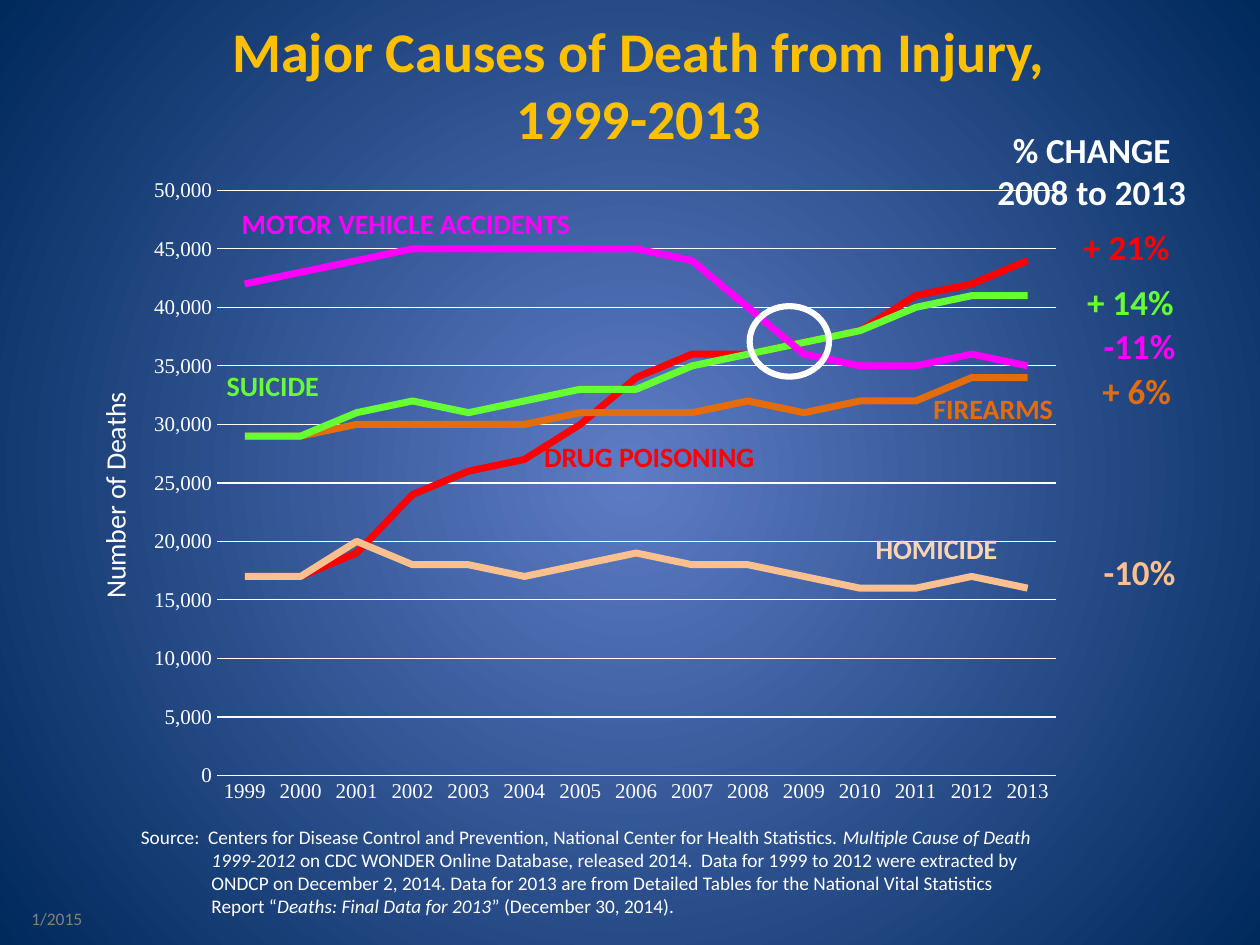
from lxml import etree
from pptx import Presentation
from pptx.chart.data import CategoryChartData
from pptx.dml.color import RGBColor
from pptx.enum.chart import XL_CHART_TYPE, XL_TICK_MARK
from pptx.enum.shapes import MSO_SHAPE
from pptx.enum.text import MSO_AUTO_SIZE, PP_ALIGN
from pptx.oxml import parse_xml
from pptx.oxml.ns import nsdecls, qn
from pptx.util import Inches, Pt

LINE_CHART = XL_CHART_TYPE.LINE
NO_TICKS = XL_TICK_MARK.NONE
OVAL = MSO_SHAPE.OVAL
GROW = MSO_AUTO_SIZE.SHAPE_TO_FIT_TEXT
LEFT, CENTER = PP_ALIGN.LEFT, PP_ALIGN.CENTER

COLORS = {
    "center": "5E7CC5", "edge": "00295C", "white": "FFFFFF", "gold": "FFC000",
    "gray": "808080", "drugs": "FF0000", "firearms": "E46C0A",
    "suicide": "66FF33", "homicide": "FAC090", "homicide label": "FCD5B5",
    "vehicles": "FF00FF",
}
THOUSANDS = {
    "drugs": [17, 17, 19, 24, 26, 27, 30, 34, 36, 36, 37, 38, 41, 42, 44],
    "firearms": [29, 29, 30, 30, 30, 30, 31, 31, 31, 32, 31, 32, 32, 34, 34],
    "suicide": [29, 29, 31, 32, 31, 32, 33, 33, 35, 36, 37, 38, 40, 41, 41],
    "homicide": [17, 17, 20, 18, 18, 17, 18, 19, 18, 18, 17, 16, 16, 17, 16],
    "vehicles": [42, 43, 44, 45, 45, 45, 45, 45, 44, 40, 36, 35, 35, 36, 35],
}

presentation = Presentation()
presentation.slide_width = Inches(10)
presentation.slide_height = Inches(7.5)
COLUMN = presentation.slide_width / 100
ROW = presentation.slide_height / 75
slide = presentation.slides.add_slide(presentation.slide_layouts[6])


def place(left, top, width, height):
    return [int(left * COLUMN), int(top * ROW), int(width * COLUMN), int(height * ROW)]


def add_text(text, box, size, color, bold=False, align=LEFT, wrap=True, hanging=0):
    frame = slide.shapes.add_textbox(*place(*box)).text_frame
    frame.word_wrap = wrap
    frame.auto_size = GROW
    for number, line in enumerate(text.split("\n")):
        paragraph = frame.add_paragraph() if number else frame.paragraphs[0]
        paragraph.alignment = align
        if hanging:
            properties = paragraph._p.get_or_add_pPr()
            properties.set("marL", str(int(hanging * COLUMN)))
            properties.set("indent", str(-int(hanging * COLUMN)))
        for part, words in enumerate(line.split("|")):
            run = paragraph.add_run()
            run.text = words
            run.font.name = "Calibri"
            run.font.size = Pt(size)
            run.font.bold = bold
            run.font.italic = part % 2 == 1
            run.font.color.rgb = RGBColor.from_string(COLORS[color])


background = slide.background.fill
background.gradient()
for stop, color in zip(background.gradient_stops, ("center", "edge")):
    stop.color.rgb = RGBColor.from_string(COLORS[color])
gradient = slide.element.find(".//" + qn("a:gradFill"))
gradient.remove(gradient.find(qn("a:lin")))
radial = etree.SubElement(gradient, qn("a:path"), path="circle")
etree.SubElement(radial, qn("a:fillToRect"), l="50000", t="50000", r="50000", b="50000")

chart_data = CategoryChartData(number_format="#,##0")
chart_data.categories = [str(year) for year in range(1999, 2014)]
for cause, values in THOUSANDS.items():
    chart_data.add_series(cause.capitalize(), [value * 1000 for value in values])
chart = slide.shapes.add_chart(LINE_CHART, *place(4.8, 13.2, 80.6, 51.6), chart_data).chart
white = RGBColor.from_string(COLORS["white"])
chart.has_legend = False
chart.has_title = False
chart.font.name = "Times New Roman"
chart.font.size = Pt(10)
chart.font.color.rgb = white
chart.plots[0].vary_by_categories = False
for series, cause in zip(chart.plots[0].series, THOUSANDS):
    series.smooth = False
    series.format.line.width = Pt(4)
    series.format.line.color.rgb = RGBColor.from_string(COLORS[cause])

years, deaths = chart.category_axis, chart.value_axis
for axis in (years, deaths):
    axis.major_tick_mark = axis.minor_tick_mark = NO_TICKS
    axis.tick_labels.font.name = "Times New Roman"
    axis.tick_labels.font.size = Pt(12)
    axis.tick_labels.font.color.rgb = white
deaths.minimum_scale, deaths.maximum_scale, deaths.major_unit = 0, 50000, 5000
deaths.tick_labels.number_format = "#,##0"
deaths.tick_labels.number_format_is_linked = False
deaths.format.line.fill.background()
for line in (years.format.line, deaths.major_gridlines.format.line):
    line.color.rgb = white
    line.width = Pt(0.75)

title_frame = deaths.axis_title.text_frame
title_frame.text = "Number of Deaths"
title_font = title_frame.paragraphs[0].runs[0].font
title_font.name, title_font.size, title_font.bold = "Calibri", Pt(16), False
title_font.color.rgb = white
title_body = title_frame._txBody.find(qn("a:bodyPr"))
title_body.set("rot", "-5400000")
title_body.set("vert", "horz")

LAYOUTS = [
    (chart._chartSpace.find(".//" + qn("c:plotArea")), 0,
     {"layoutTarget": "inner", "xMode": "edge", "yMode": "edge",
      "x": 0.154, "y": 0.037, "w": 0.826, "h": 0.9}),
    (deaths.axis_title._element, 1,
     {"xMode": "edge", "yMode": "edge", "x": 0.03, "y": 0.34}),
]
for element, position, settings in LAYOUTS:
    for existing in element.findall(qn("c:layout")):
        element.remove(existing)
    layout = parse_xml(f"<c:layout {nsdecls('c')}><c:manualLayout/></c:layout>")
    for name, value in settings.items():
        etree.SubElement(layout[0], qn(f"c:{name}"), val=str(value))
    element.insert(position, layout)

add_text("Major Causes of Death from Injury, 1999-2013", (13.2, 0.8, 75, 11.8),
         32, "gold", bold=True, align=CENTER)
add_text("Source:  Centers for Disease Control and Prevention, National Center for "
         "Health Statistics. |Multiple Cause of Death 1999-2012| on CDC WONDER Online "
         "Database, released 2014.  Data for 1999 to 2012 were extracted by ONDCP on "
         "December 2, 2014. Data for 2013 are from Detailed Tables for the National "
         "Vital Statistics Report “|Deaths: Final Data for 2013|” (December 30, 2014).",
         (10.2, 65, 73.3, 8.4), 11, "white", hanging=5.6)
add_text("1/2015", (1.5, 71.6, 6.8, 2.7), 10, "gray", hanging=6.3)
add_text("% CHANGE\n2008 to 2013", (75, 9.7, 23.3, 7.7), 20, "white", bold=True, align=CENTER)

CHANGES = [
    ("+ 21%", 85, 17.4, 8.9, "drugs"),
    ("-10%", 86.6, 43.2, 7.8, "homicide"),
    ("+ 14%", 85.3, 21.8, 8.9, "suicide"),
    ("-11%", 86.6, 25.3, 7.8, "vehicles"),
    ("+ 6%", 86.5, 28.8, 7.5, "firearms"),
]
CAUSES = [
    ("HOMICIDE", 68.5, 41.7, 11.8, "homicide label"),
    ("FIREARMS", 73.1, 30.6, 11.6, "firearms"),
    ("DRUG POISONING", 42.2, 34.4, 19, "drugs"),
    ("SUICIDE", 17, 28.8, 9.5, "suicide"),
    ("MOTOR VEHICLE ACCIDENTS", 18.2, 15.9, 28.4, "vehicles"),
]
for labels, size, height in ((CHANGES, 20, 4.4), (CAUSES, 16, 3.7)):
    for text, left, top, width, color in labels:
        add_text(text, (left, top, width, height), size, color, bold=True, wrap=False)

crossover = slide.shapes.add_shape(OVAL, *place(59.5, 24.3, 6.3, 5.6))
crossover.shadow.inherit = False
crossover.fill.background()
crossover.line.color.rgb = white
crossover.line.width = Pt(3.5)

presentation.save("out.pptx")
